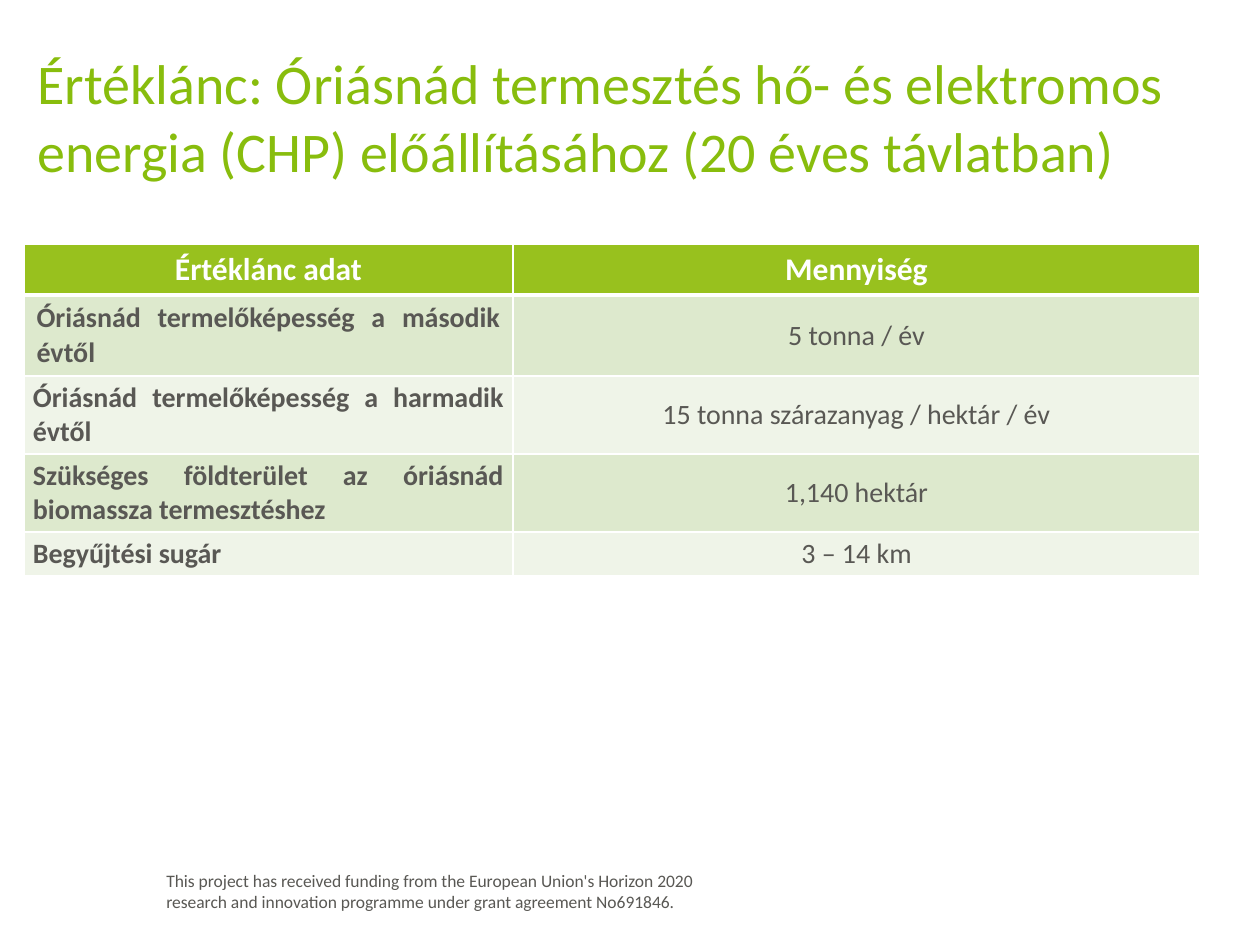
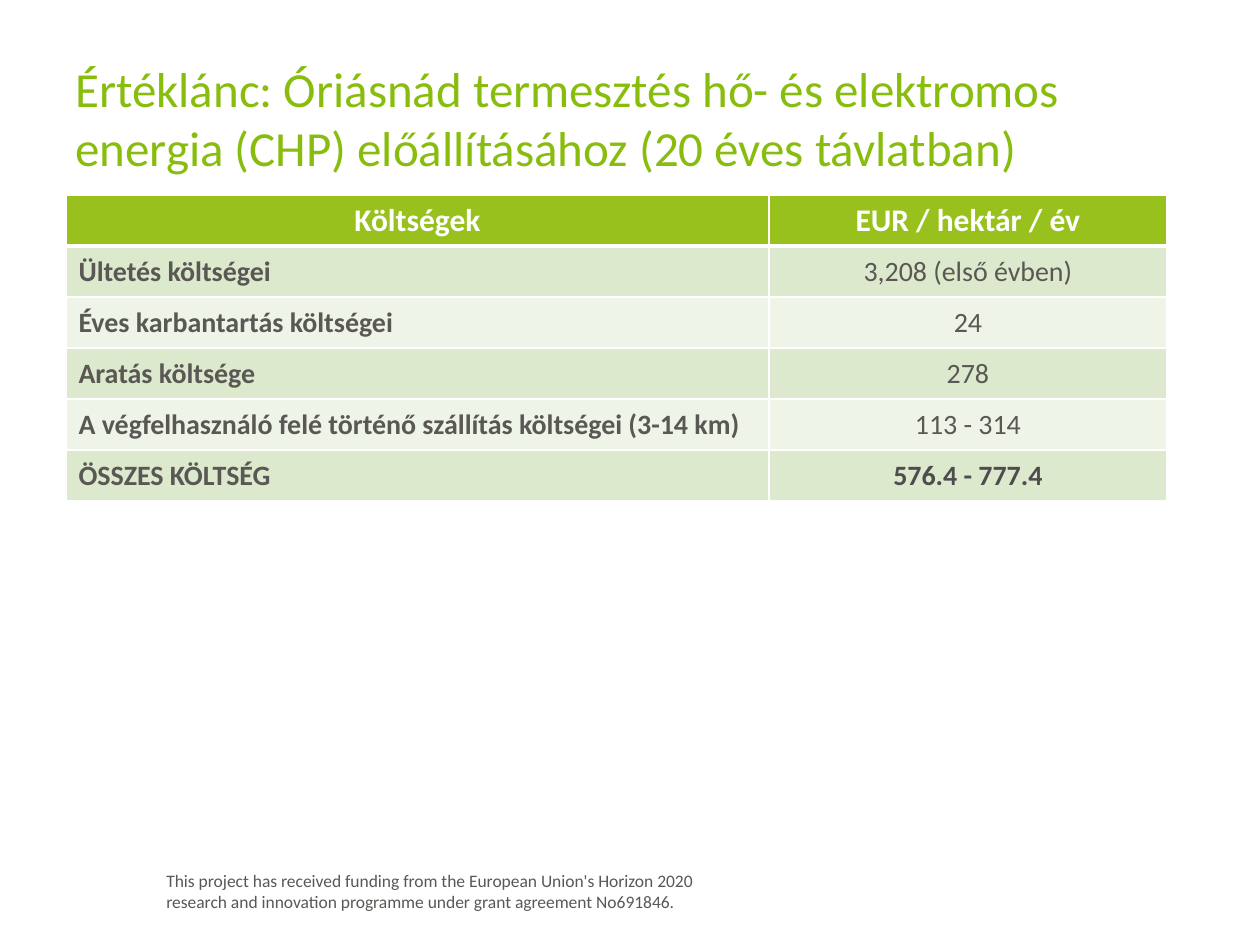
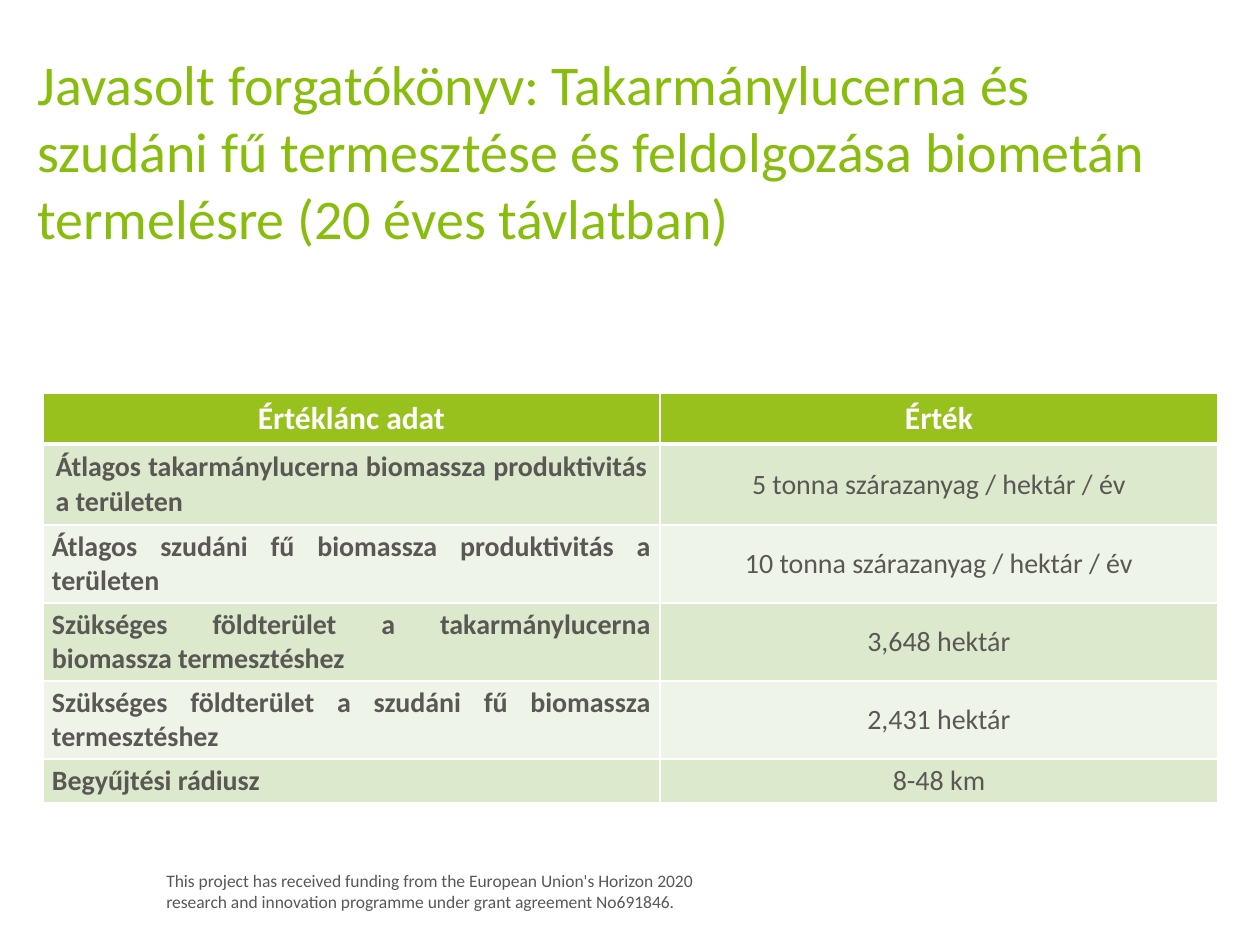
from lxml.etree import SubElement
from pptx import Presentation
from pptx.dml.color import RGBColor
from pptx.enum.text import MSO_ANCHOR as VA, PP_ALIGN as AL
from pptx.oxml.ns import qn
from pptx.util import Emu, Pt

SCALE = 914400 / 126
FONT = "Calibri"
GREEN, HEAD, BODY, TOTAL, WHITE = "88BD0D", "98C11E", "595854", "4D4D4D", "FFFFFF"
BANDS = ("DDE9CD", "EFF4E8")
FOOTER = (
    "This project has received funding from the European Union's Horizon 2020",
    "research and innovation programme under grant agreement No691846.",
)
TIGHT = {"margin_left": 9, "margin_right": 9, "margin_top": 5, "margin_bottom": 5}


def px(n):
    return Emu(round(n * SCALE))


def rgb(code):
    return RGBColor.from_string(code)


def apply(obj, fmt):
    for name, value in fmt.items():
        setattr(obj, name, value)


class Deck:
    def __init__(self):
        self.prs = Presentation()
        self.prs.slide_width, self.prs.slide_height = px(1260), px(945)
        self.s = None

    def slide(self):
        self.s = self.prs.slides.add_slide(self.prs.slide_layouts[6])
        self.text(FOOTER, (154, 864, 605, 55), 10, BODY)

    def run(self, p, text, size, color, bold=False, align=AL.LEFT):
        p.alignment = align
        r = p.add_run()
        r.text = text
        apply(r.font, {"name": FONT, "size": Pt(size), "bold": bold})
        r.font.color.rgb = rgb(color)

    def text(self, lines, box, size, color, anchor=VA.TOP):
        tf = self.s.shapes.add_textbox(*map(px, box)).text_frame
        apply(tf, {"word_wrap": True, "vertical_anchor": anchor})
        for i, line in enumerate(lines):
            p = tf.add_paragraph() if i else tf.paragraphs[0]
            self.run(p, line, size, color)
        return tf

    def title(self, text, box=(25, 96, 1193, 108), size=32, bottom=6):
        tf = self.text([text], box, size, GREEN, VA.MIDDLE)
        tf.margin_bottom = px(bottom)

    def borders(self, cell, top, bottom):
        tc_pr = cell._tc.get_or_add_tcPr()
        for side, width in zip("LRTB", (1, 1, top, bottom)):
            ln = SubElement(tc_pr, qn(f"a:ln{side}"), w=str(Pt(width)))
            fill = SubElement(ln, qn("a:solidFill"))
            SubElement(fill, qn("a:srgbClr"), val=WHITE)

    def cell(self, cell, text, row, col, align, total):
        self.borders(cell, 3 if row == 1 else 1, 1 if row else 3)
        cell.fill.solid()
        cell.fill.fore_color.rgb = rgb(BANDS[(row - 1) % 2] if row else HEAD)
        cell.vertical_anchor = VA.MIDDLE
        p = cell.text_frame.paragraphs[0]
        if row == 0:
            self.run(p, text, 18, WHITE, True, AL.CENTER)
            return
        if align == AL.JUSTIFY and row > 1:
            apply(cell, {name: px(n) for name, n in TIGHT.items()})
            if col == 0:
                cell.vertical_anchor = VA.BOTTOM
        color = TOTAL if total and col else BODY
        self.run(p, text, 16, color, col == 0 or total, AL.CENTER if col else align)

    def table(self, left, top, widths, heights, rows, align=AL.JUSTIFY, total=False):
        box = (left, top, sum(widths), sum(heights))
        tbl = self.s.shapes.add_table(len(rows), len(widths), *map(px, box)).table
        apply(tbl, {"first_row": False, "horz_banding": False})
        for column, width in zip(tbl.columns, widths):
            column.width = px(width)
        for i, (height, row) in enumerate(zip(heights, rows)):
            tbl.rows[i].height = px(height)
            for j, text in enumerate(row):
                self.cell(tbl.cell(i, j), text, i, j, align, total and i == len(rows) - 1)


def main():
    deck = Deck()
    chain = "Értéklánc: Óriásnád termesztés hő- és elektromos energia (CHP) előállításához (20 éves távlatban)"

    deck.slide()
    deck.title(chain, bottom=74)
    deck.table(24, 244, (489, 687), (51, 81, 78, 78, 44), [
        ("Értéklánc adat", "Mennyiség"),
        ("Óriásnád termelőképesség a második évtől", "5 tonna / év"),
        ("Óriásnád termelőképesség a harmadik évtől", "15 tonna szárazanyag / hektár / év"),
        ("Szükséges földterület az óriásnád biomassza termesztéshez", "1,140 hektár"),
        ("Begyűjtési sugár", "3 – 14 km"),
    ])

    deck.slide()
    deck.title(chain, (63, 38, 1134, 158), 28)
    deck.table(66, 195, (703, 398), [51] * 6, [
        ("Költségek", "EUR / hektár / év"),
        ("Ültetés költségei", "3,208 (első évben)"),
        ("Éves karbantartás költségei", "24"),
        ("Aratás költsége", "278"),
        ("A végfelhasználó felé történő szállítás költségei (3-14 km)", "113 - 314"),
        ("ÖSSZES KÖLTSÉG", "576.4 - 777.4"),
    ], AL.LEFT, True)

    deck.slide()
    deck.title("Javasolt forgatókönyv: Takarmánylucerna és szudáni fű termesztése és feldolgozása "
               "biometán termelésre (20 éves távlatban)")
    deck.table(43, 393, (617, 558), (51, 81, 78, 78, 78, 44), [
        ("Értéklánc adat", "Érték"),
        ("Átlagos takarmánylucerna biomassza produktivitás a területen", "5 tonna szárazanyag / hektár / év"),
        ("Átlagos szudáni fű biomassza produktivitás a területen", "10 tonna szárazanyag / hektár / év"),
        ("Szükséges földterület a takarmánylucerna biomassza termesztéshez", "3,648 hektár"),
        ("Szükséges földterület a szudáni fű biomassza termesztéshez", "2,431 hektár"),
        ("Begyűjtési rádiusz", "8-48 km"),
    ])

    deck.prs.save("out.pptx")


if __name__ == "__main__":
    main()
